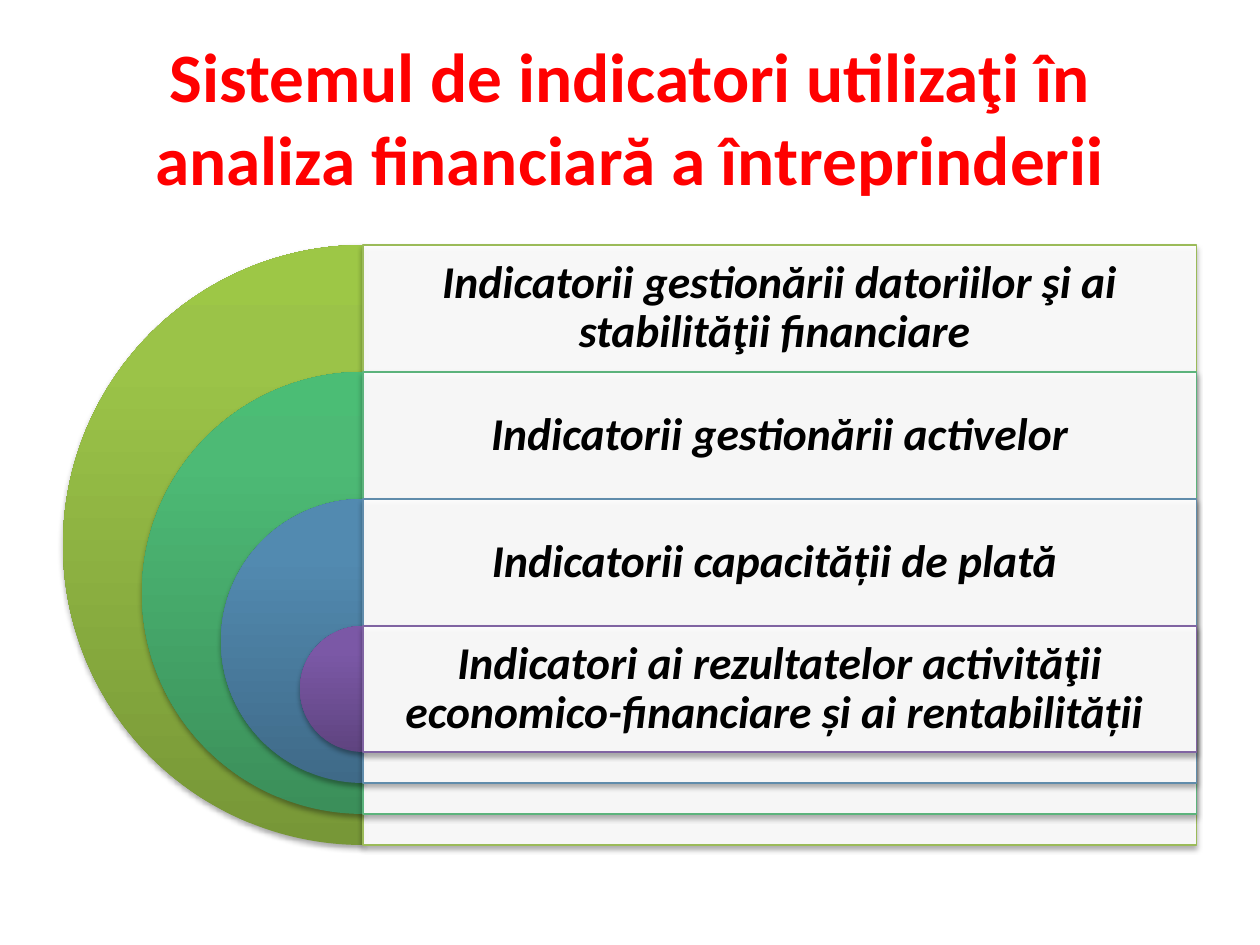
from copy import deepcopy
from dataclasses import dataclass

from lxml.etree import SubElement
from pptx import Presentation
from pptx.dml.color import RGBColor
from pptx.enum.shapes import MSO_SHAPE as Shape
from pptx.enum.text import MSO_ANCHOR as Anchor, MSO_AUTO_SIZE as AutoSize, PP_ALIGN as Align
from pptx.oxml.ns import qn
from pptx.util import Pt

PX = 7257  # EMU in one px, at 126 px to the inch


@dataclass(frozen=True)
class Theme:
    font: str = "Calibri"
    title_size: float = 39.6
    label_size: float = 26
    title: str = "FF0000"
    text: str = "000000"
    panel: str = "FFFFFF"
    panel_opacity: int = 90
    shadow: str = "000000"
    shadow_opacity: int = 35


THEME = Theme()
TITLE = "Sistemul de indicatori utilizaţi în analiza financiară a întreprinderii"

# label, gradient colours from bottom to top, panel outline
LEVELS = [
    ("Indicatorii gestionării datoriilor şi ai stabilităţii financiare ",
     ("779737", "9BC348", "9DC746"), "9BBB59"),
    ("Indicatorii gestionării activelor",
     ("3B8F5A", "4DBA75", "4BBD75"), "5CB37C"),
    ("Indicatorii capacității de plată ",
     ("3F6A88", "528AB0", "518BB3"), "608CAB"),
    ("Indicatori ai rezultatelor activităţii economico-financiare și ai rentabilității ",
     ("5F4480", "7B58A6", "7C57A8"), "8064A2"),
]
GRADIENT_POSITIONS = (0, 0.8, 1)

AXIS_X, TOP = 363, 245
PANEL_WIDTH, ROW_HEIGHT = 834, 127
OUTER_DIAMETER, DIAMETER_STEP = 600, 158
LABEL_INSET = 14


def rgb(color):
    return RGBColor.from_string(color)


def box(*lengths):
    return [length * PX for length in lengths]


def set_opacity(color_element, percent):
    SubElement(color_element, qn("a:alpha"), val=str(percent * 1000))


def add_shadow(shape):
    shape.shadow.inherit = False
    effects = shape.element.spPr.find(qn("a:effectLst"))
    shadow = SubElement(effects, qn("a:outerShdw"), blurRad=str(Pt(3.1)),
                        dist=str(Pt(1.8)), dir="5400000", rotWithShape="0")
    color = SubElement(shadow, qn("a:srgbClr"), val=THEME.shadow)
    set_opacity(color, THEME.shadow_opacity)


def style_text(paragraph, size, color, italic=False):
    paragraph.alignment = Align.CENTER
    font = paragraph.font
    font.name, font.size, font.color.rgb = THEME.font, Pt(size), rgb(color)
    font.bold, font.italic = True, italic


def set_title(slide):
    title = slide.shapes.title
    title.left, title.top, title.width, title.height = box(63, 38, 1134, 157)
    frame = title.text_frame
    frame.text = TITLE
    frame.auto_size = AutoSize.NONE
    frame.vertical_anchor = Anchor.MIDDLE
    style_text(frame.paragraphs[0], THEME.title_size, THEME.title)


def add_half_disc(slide, top, diameter, colors):
    disc = slide.shapes.add_shape(
        Shape.PIE, *box(AXIS_X - diameter // 2, top, diameter, diameter))
    disc.adjustments[0], disc.adjustments[1] = 54, 162  # 90 to 270 degrees
    disc.line.fill.background()
    disc.fill.gradient()
    disc.fill.gradient_angle = 90
    stop_list = disc.element.spPr.find(".//" + qn("a:gsLst"))
    stop_list.append(deepcopy(stop_list[-1]))
    for stop, position, color in zip(disc.fill.gradient_stops, GRADIENT_POSITIONS, colors):
        stop.position = position
        stop.color.rgb = rgb(color)
    add_shadow(disc)


def add_panel(slide, top, height, outline):
    panel = slide.shapes.add_shape(Shape.RECTANGLE, *box(AXIS_X, top, PANEL_WIDTH, height))
    panel.fill.solid()
    panel.fill.fore_color.rgb = rgb(THEME.panel)
    set_opacity(panel.element.spPr.find(qn("a:solidFill"))[0], THEME.panel_opacity)
    panel.line.color.rgb = rgb(outline)
    panel.line.width = Pt(0.75)
    add_shadow(panel)


def add_label(slide, top, text):
    label = slide.shapes.add_textbox(*box(AXIS_X, top, PANEL_WIDTH, ROW_HEIGHT))
    frame = label.text_frame
    frame.word_wrap = True
    frame.vertical_anchor = Anchor.MIDDLE
    frame.margin_left = frame.margin_right = LABEL_INSET * PX
    frame.margin_top = frame.margin_bottom = LABEL_INSET * PX
    frame.text = text
    paragraph = frame.paragraphs[0]
    paragraph.line_spacing = 0.9
    style_text(paragraph, THEME.label_size, THEME.text, italic=True)


def main():
    presentation = Presentation()
    presentation.slide_width, presentation.slide_height = box(1260, 945)
    slide = presentation.slides.add_slide(presentation.slide_layouts[5])
    set_title(slide)
    for index, (text, colors, outline) in enumerate(LEVELS):
        top = TOP + index * ROW_HEIGHT
        diameter = OUTER_DIAMETER - index * DIAMETER_STEP
        add_half_disc(slide, top, diameter, colors)
        add_panel(slide, top, diameter, outline)
        add_label(slide, top, text)
    presentation.save("out.pptx")


if __name__ == "__main__":
    main()
